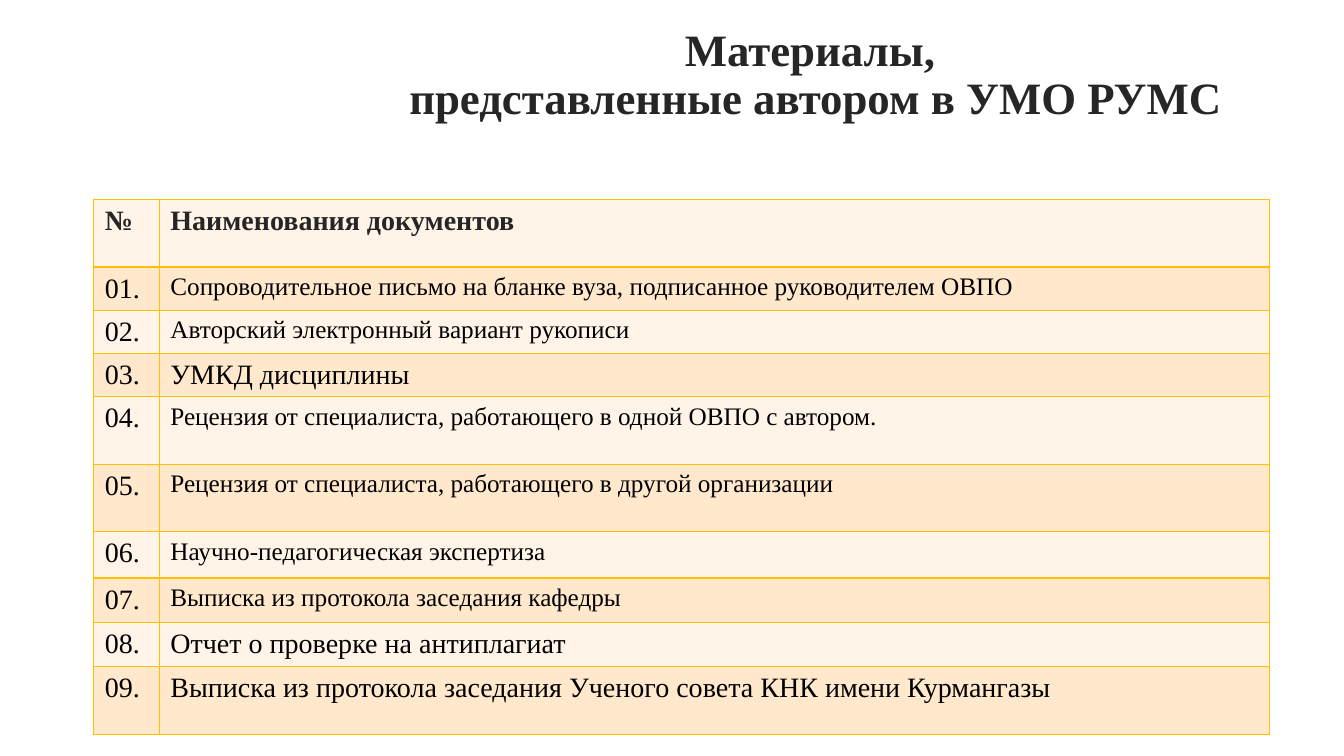
from dataclasses import dataclass

from lxml import etree
from pptx import Presentation
from pptx.dml.color import RGBColor
from pptx.enum.text import MSO_ANCHOR, PP_ALIGN
from pptx.oxml.ns import qn
from pptx.util import Inches, Pt

CENTER = PP_ALIGN.CENTER
MIDDLE = MSO_ANCHOR.MIDDLE
TITLE_ONLY = 5

FONT = "Times New Roman"
DARK = "262626"
BLACK = "000000"
GOLD = "FFC000"
BANDS = ("FFF4E7", "FFE8CC")
COLUMN_WIDTHS = (0.65, 11.01)
TITLE_LINES = ("Материалы, ", "представленные автором в УМО РУМС")


@dataclass
class Row:
    name: str
    height: float
    size: int = 18


HEADING = Row("Наименования документов", 0.67, 20)
DOCUMENTS = (
    Row("Сопроводительное письмо на бланке вуза, подписанное руководителем ОВПО", 0.42),
    Row("Авторский электронный вариант рукописи", 0.42),
    Row("УМКД дисциплины", 0.42, 20),
    Row("Рецензия от специалиста, работающего в одной ОВПО с автором.", 0.67),
    Row("Рецензия от специалиста, работающего в другой организации", 0.67),
    Row("Научно-педагогическая экспертиза", 0.46),
    Row("Выписка из протокола заседания кафедры", 0.44),
    Row("Отчет о проверке на антиплагиат", 0.44, 20),
    Row("Выписка из протокола заседания Ученого совета КНК имени Курмангазы", 0.67, 20),
)


def rgb(color: str) -> RGBColor:
    return RGBColor.from_string(color)


def add_span(para, text: str, size: int, color: str, bold: bool) -> None:
    span = para.add_run()
    span.text = text
    span.font.name = FONT
    span.font.size = Pt(size)
    span.font.bold = bold
    span.font.color.rgb = rgb(color)


def add_borders(cell) -> None:
    properties = cell._tc.get_or_add_tcPr()
    for side in ("a:lnL", "a:lnR", "a:lnT", "a:lnB"):
        line = etree.SubElement(properties, qn(side), w=str(Pt(1)))
        fill = etree.SubElement(line, qn("a:solidFill"))
        etree.SubElement(fill, qn("a:srgbClr"), val=GOLD)


def fill_cell(cell, text: str, size: int, heading: bool, band: str) -> None:
    cell.margin_left = cell.margin_right = Inches(0.11)
    cell.margin_top = cell.margin_bottom = Inches(0.06)
    add_borders(cell)
    cell.fill.solid()
    cell.fill.fore_color.rgb = rgb(band)
    color = DARK if heading else BLACK
    add_span(cell.text_frame.paragraphs[0], text, size, color, heading)


def add_title(page) -> None:
    title = page.shapes.title
    title.left, title.top = Inches(2.84), Inches(0.03)
    title.width, title.height = Inches(10.5), Inches(1.45)
    title.text_frame.word_wrap = True
    title.text_frame.vertical_anchor = MIDDLE
    para = title.text_frame.paragraphs[0]
    para.alignment = CENTER
    para.line_spacing = 0.9
    for index, line in enumerate(TITLE_LINES):
        if index:
            para.add_line_break()
        add_span(para, line, 32, DARK, True)


def add_documents(page) -> None:
    rows = (HEADING, *DOCUMENTS)
    frame = page.shapes.add_table(
        len(rows), len(COLUMN_WIDTHS), Inches(0.93), Inches(1.98),
        Inches(sum(COLUMN_WIDTHS)), Inches(sum(row.height for row in rows)))
    table = frame.table
    for column, width in zip(table.columns, COLUMN_WIDTHS):
        column.width = Inches(width)
    for index, row in enumerate(rows):
        table.rows[index].height = Inches(row.height)
        heading = index == 0
        number = "№" if heading else f"{index:02}."
        band = BANDS[index % 2]
        fill_cell(table.cell(index, 0), number, 20, heading, band)
        fill_cell(table.cell(index, 1), row.name, row.size, heading, band)


def main() -> None:
    deck = Presentation()
    deck.slide_width, deck.slide_height = Inches(13.33), Inches(7.5)
    page = deck.slides.add_slide(deck.slide_layouts[TITLE_ONLY])
    add_title(page)
    add_documents(page)
    deck.save("out.pptx")


if __name__ == "__main__":
    main()
